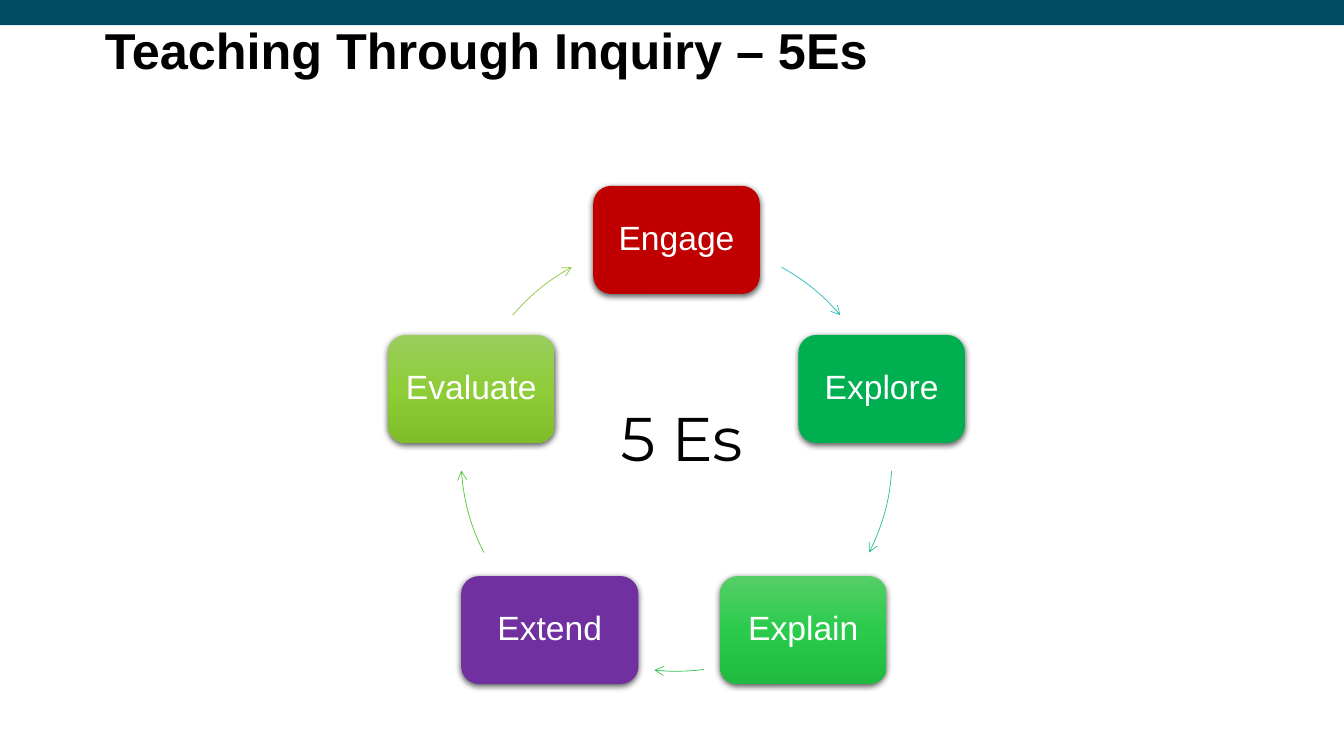
from copy import deepcopy
from dataclasses import dataclass
from math import cos, radians, sin

from lxml import etree
from pptx import Presentation
from pptx.dml.color import RGBColor
from pptx.enum.shapes import MSO_SHAPE
from pptx.enum.text import MSO_ANCHOR, MSO_AUTO_SIZE, PP_ALIGN
from pptx.oxml.ns import qn
from pptx.util import Inches, Pt

RECTANGLE, ROUNDED, ARC = MSO_SHAPE.RECTANGLE, MSO_SHAPE.ROUNDED_RECTANGLE, MSO_SHAPE.ARC
TOP, MIDDLE = MSO_ANCHOR.TOP, MSO_ANCHOR.MIDDLE
LEFT, CENTER = PP_ALIGN.LEFT, PP_ALIGN.CENTER
TITLE_ONLY = 5
WIDTH, HEIGHT = Inches(13.33), Inches(7.5)

# Cycle geometry, in percent of the slide's width and height
CENTER_X, CENTER_Y = 50.34, 60.27
RADIUS_X, RADIUS_Y = 16.05, 28.53
BOX_HEIGHT = 14.3


@dataclass
class Stage:
    name: str
    fill: tuple[str, ...]  # one colour, or the stops of a vertical gradient
    arrow_color: str
    arrow_start: float  # degrees clockwise from the right
    arrow_end: float
    width: float = 12.4


STAGES = [
    Stage("Engage", ("C00000",), "27BDBE", 299.1, 319.4),
    Stage("Explore", ("00B050",), "2CC187", 4, 26.7),
    Stage("Explain", ("55CE68", "2ACB4C", "1EBB40"), "31C450", 82.7, 95.9),
    Stage("Extend", ("7030A0",), "50C736", 153.3, 176, width=13.2),
    Stage("Evaluate", ("9ACD5E", "8ECD38", "7FBD2A"), "8DC63F", 220.6, 240.9),
]


def color(value: str) -> RGBColor:
    return RGBColor.from_string(value)


def area(left: float, top: float, width: float, height: float) -> tuple[int, ...]:
    """Turn percentages of the slide into lengths."""
    return (round(WIDTH * left / 100), round(HEIGHT * top / 100),
            round(WIDTH * width / 100), round(HEIGHT * height / 100))


def around(x: float, y: float, width: float, height: float) -> tuple[int, ...]:
    return area(x - width / 2, y - height / 2, width, height)


def write(box, text: str, *, size: float, font: str = "Arial", ink: str = "000000",
          bold: bool = False, align=CENTER, anchor=TOP, spacing: float = 1.0,
          margin: float | None = None) -> None:
    frame = box.text_frame
    frame.word_wrap = True
    frame.auto_size = MSO_AUTO_SIZE.NONE
    frame.vertical_anchor = anchor
    if margin is not None:
        frame.margin_left = frame.margin_right = Inches(margin)
        frame.margin_top = frame.margin_bottom = Inches(margin)
    para = frame.paragraphs[0]
    para.alignment, para.line_spacing = align, spacing
    span = para.add_run()
    span.text = text
    span.font.name, span.font.size, span.font.bold = font, Pt(size), bold
    span.font.color.rgb = color(ink)


def paint(shape, colors: tuple[str, ...]) -> None:
    shape.shadow.inherit = False
    shape.line.fill.background()
    if len(colors) == 1:
        shape.fill.solid()
        shape.fill.fore_color.rgb = color(colors[0])
        return
    shape.fill.gradient()
    shape.fill.gradient_angle = 270
    stop_list = shape._element.spPr.find(".//" + qn("a:gsLst"))
    while len(stop_list) < len(colors):
        stop_list.append(deepcopy(stop_list[0]))
    for index, (stop, value) in enumerate(zip(shape.fill.gradient_stops, colors)):
        stop.position = index / (len(colors) - 1)
        stop.color.rgb = color(value)


def add_shadow(shape) -> None:
    effects = shape._element.spPr.find(qn("a:effectLst"))
    shadow = etree.SubElement(effects, qn("a:outerShdw"), blurRad=str(Pt(4.5)),
                              dist=str(Pt(1.5)), dir="5400000", algn="ctr", rotWithShape="0")
    black = etree.SubElement(shadow, qn("a:srgbClr"), val="000000")
    etree.SubElement(black, qn("a:alpha"), val="63000")


def add_stage(page, stage: Stage, angle: float) -> None:
    x = CENTER_X + RADIUS_X * sin(radians(angle))
    y = CENTER_Y - RADIUS_Y * cos(radians(angle))
    box = page.shapes.add_shape(ROUNDED, *around(x, y, stage.width, BOX_HEIGHT))
    paint(box, stage.fill)
    add_shadow(box)
    write(box, stage.name, size=24, ink="FFFFFF", anchor=MIDDLE, spacing=0.9, margin=0.1)


def add_arrow(page, stage: Stage) -> None:
    arrow = page.shapes.add_shape(ARC, *around(CENTER_X, CENTER_Y, 2 * RADIUS_X, 2 * RADIUS_Y))
    arrow.shadow.inherit = False
    arrow.fill.background()
    for index, degrees in enumerate((stage.arrow_start, stage.arrow_end)):
        arrow.adjustments[index] = degrees * 0.6  # 60000 units a degree, over 100000
    arrow.line.color.rgb = color(stage.arrow_color)
    arrow.line.width = Pt(0.5)
    etree.SubElement(arrow._element.spPr.find(qn("a:ln")), qn("a:tailEnd"), type="arrow")


def main() -> None:
    deck = Presentation()
    deck.slide_width, deck.slide_height = WIDTH, HEIGHT
    page = deck.slides.add_slide(deck.slide_layouts[TITLE_ONLY])

    # Top band and title
    band = page.shapes.add_shape(RECTANGLE, *area(0, 0, 100, 3.33))
    paint(band, ("014B64",))
    title = page.shapes.title
    title.left, title.top, title.width, title.height = area(7.8, 3.47, 85, 23.33)
    write(title, "Teaching Through Inquiry – 5Es", size=36, bold=True,
          align=LEFT, spacing=0.9, margin=0)

    # Cycle of stages, clockwise from the top
    for index, stage in enumerate(STAGES):
        add_stage(page, stage, index * 360 / len(STAGES))
        add_arrow(page, stage)

    # Label in the middle
    label = page.shapes.add_textbox(*area(43.51, 52.27, 14.4, 11.2))
    write(label, "5 Es", size=44, font="Montserrat")

    deck.save("out.pptx")


if __name__ == "__main__":
    main()
